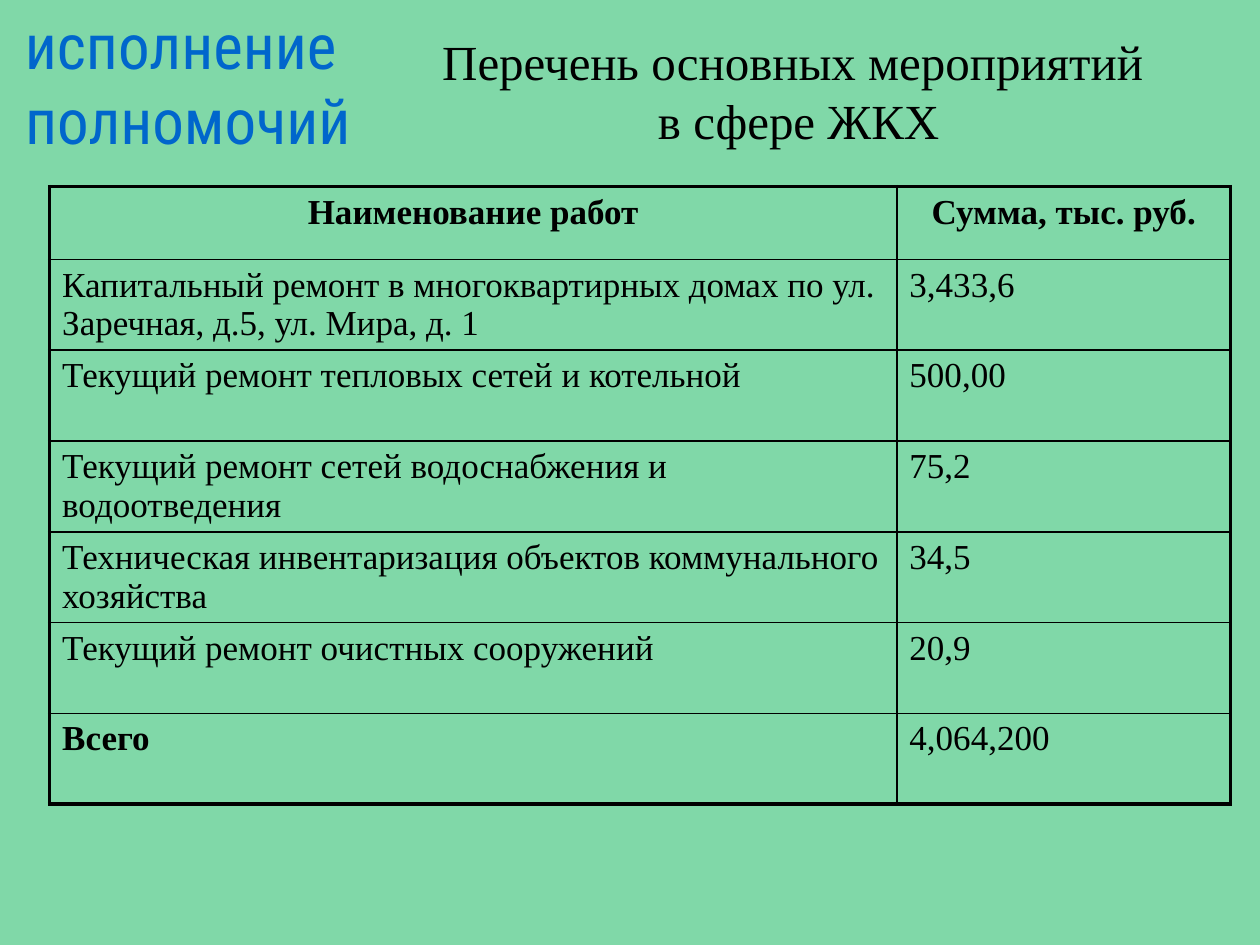
from lxml import etree
from pptx import Presentation
from pptx.dml.color import RGBColor
from pptx.enum.text import MSO_ANCHOR, PP_ALIGN
from pptx.oxml.ns import qn
from pptx.util import Cm, Pt

CENTER, LEFT = PP_ALIGN.CENTER, PP_ALIGN.LEFT
MIDDLE = MSO_ANCHOR.MIDDLE
SERIF, NARROW = "Times New Roman", "Roboto Condensed"
BLACK, BLUE, GREEN = "000000", "0066CC", "80D8A8"
THIN, THICK = 1, 2.25

ROWS = [
    ("Наименование работ", "Сумма, тыс. руб."),
    ("Капитальный ремонт в многоквартирных домах по ул. Заречная, д.5, ул. Мира, д. 1",
     "3,433,6"),
    ("Текущий ремонт тепловых сетей и котельной", "500,00"),
    ("Текущий ремонт сетей водоснабжения и водоотведения", "75,2"),
    ("Техническая инвентаризация объектов коммунального хозяйства", "34,5"),
    ("Текущий ремонт очистных сооружений", "20,9"),
    ("Всего", "4,064,200"),
]


def color(text):
    return RGBColor.from_string(text)


def border(cell, sides):
    """Draw cell edges; sides maps an edge tag to its width in points."""
    props = cell._tc.get_or_add_tcPr()
    for i, (tag, width) in enumerate(sides.items()):
        line = etree.Element(qn(f"a:{tag}"), w=str(Pt(width)))
        fill = etree.SubElement(line, qn("a:solidFill"))
        etree.SubElement(fill, qn("a:srgbClr"), val=BLACK)
        props.insert(i, line)


class Page:
    def __init__(self, deck, back):
        self.slide = deck.slides.add_slide(deck.slide_layouts[5])
        fill = self.slide.background.fill
        fill.solid()
        fill.fore_color.rgb = color(back)

    def style(self, par, size, font=SERIF, ink=BLACK, bold=False, align=CENTER):
        par.alignment = align
        par.font.size, par.font.name, par.font.bold = Pt(size), font, bold
        par.font.color.rgb = color(ink)

    def title(self, text, left, top, width, height):
        shape = self.slide.shapes.title
        shape.left, shape.top = Cm(left), Cm(top)
        shape.width, shape.height = Cm(width), Cm(height)
        frame = shape.text_frame
        frame.text, frame.vertical_anchor = text, MIDDLE
        par = frame.paragraphs[0]
        self.style(par, 28)
        par.line_spacing = Pt(34)

    def label(self, text, left, top, width, height):
        box = self.slide.shapes.add_textbox(Cm(left), Cm(top), Cm(width), Cm(height))
        frame = box.text_frame
        frame.text, frame.word_wrap = text, True
        for par in frame.paragraphs:
            self.style(par, 36, NARROW, BLUE)

    def table(self, rows, left, top, widths, heights):
        grid = self.slide.shapes.add_table(
            len(rows), len(widths), Cm(left), Cm(top),
            Cm(sum(widths)), Cm(sum(heights))).table
        for col, width in zip(grid.columns, widths):
            col.width = Cm(width)
        end, edge = len(rows) - 1, len(widths) - 1
        for r, row in enumerate(rows):
            grid.rows[r].height = Cm(heights[r])
            for c, text in enumerate(row):
                cell = grid.cell(r, c)
                cell.text = text
                cell.fill.background()
                par = cell.text_frame.paragraphs[0]
                bold = r == 0 or (r == end and c == 0)
                self.style(par, 20, bold=bold, align=LEFT if r else CENTER)
                par.space_before = Pt(4)
                border(cell, {
                    "lnL": THIN if c else THICK,
                    "lnR": THICK if c == edge else THIN,
                    "lnT": THIN if r else THICK,
                    "lnB": THICK if r == end else THIN,
                })


def main():
    deck = Presentation()
    deck.slide_width, deck.slide_height = Cm(25.4), Cm(19.05)
    page = Page(deck, GREEN)
    page.title("Перечень основных мероприятий \vв сфере ЖКХ", 7.5, 0.53, 17.2, 2.58)
    page.table(ROWS, 1, 3.76, [17.08, 6.73], [1.47] + [1.83] * 6)
    page.label("исполнение \nполномочий", 0.04, 0, 7.5, 3.3)
    deck.save("out.pptx")


if __name__ == "__main__":
    main()
